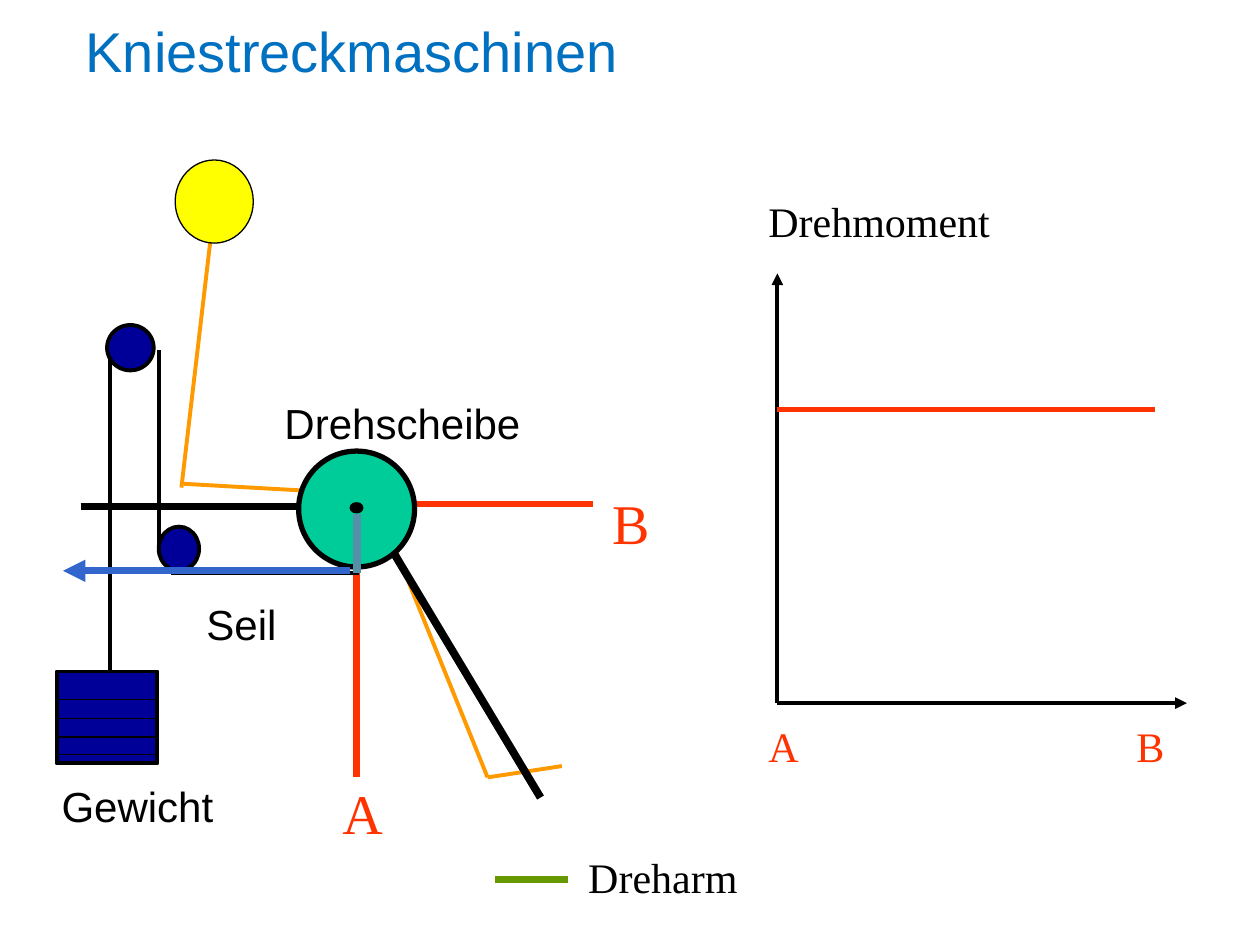
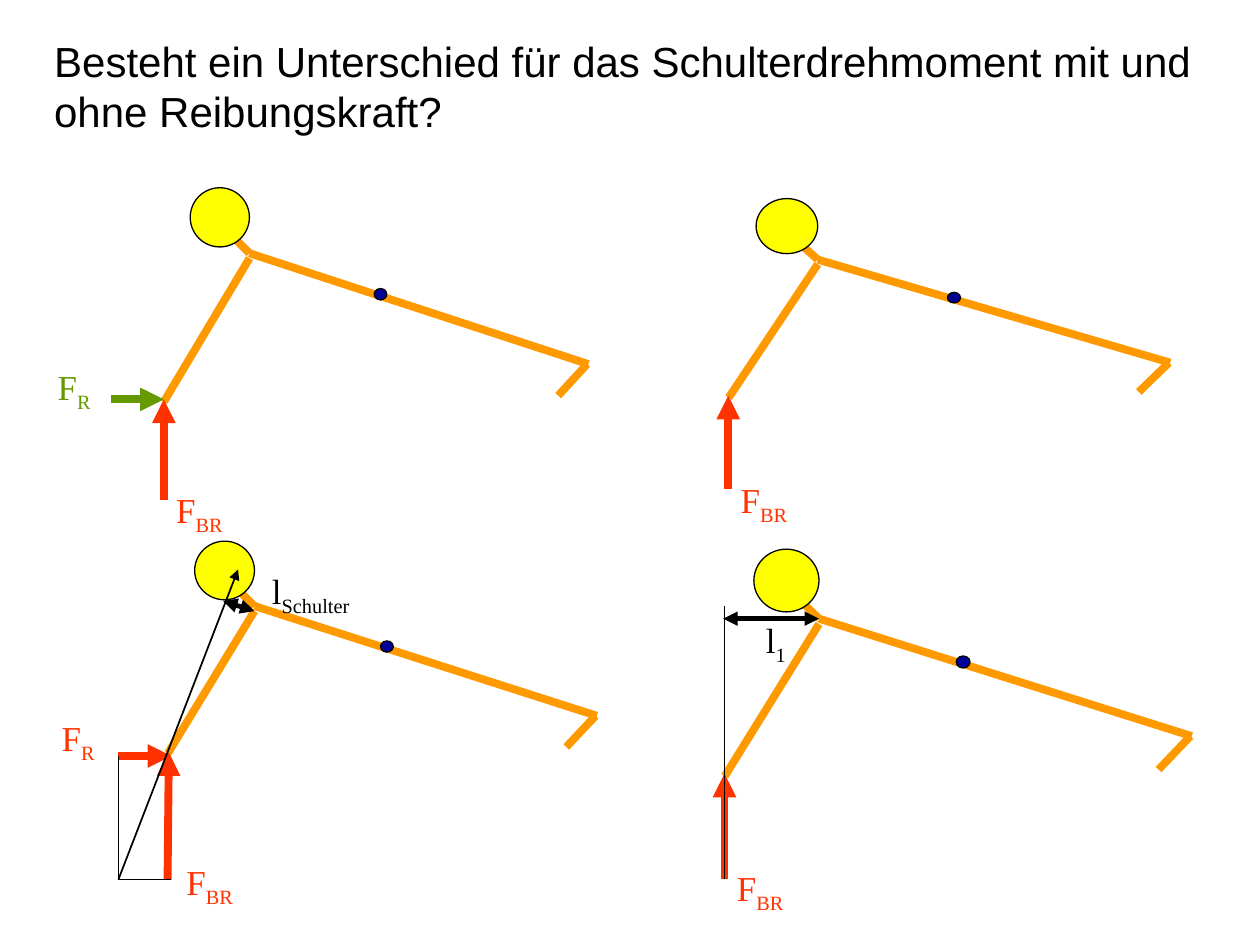
from dataclasses import dataclass

from lxml import etree
from pptx import Presentation
from pptx import util as u
from pptx.dml import color
from pptx.enum import shapes, text
from pptx.oxml import ns


@dataclass(frozen=True)
class Theme:
    black: str = "000000"
    red: str = "FF3300"
    green: str = "669900"
    orange: str = "FF9900"
    yellow: str = "FFFF00"
    navy: str = "000099"
    teal: str = "00CC99"
    lever: str = "5490A8"
    rope: str = "3366CC"
    heading: str = "0070C0"
    sans: str = "Arial"
    serif: str = "Times New Roman"
    large: int = 32
    medium: int = 24
    small: int = 20
    hairline: float = 0.75
    thin: float = 2.25
    dimension: float = 2.75
    accent: float = 3
    axis: float = 3.69
    thick: float = 4.5


THEME = Theme()


def rgb(value):
    return color.RGBColor.from_string(value)


def write_text(frame, content, subscript="", size=THEME.medium, font=THEME.serif,
               fill=THEME.black, wrap=True, spacing=None):
    frame.word_wrap = wrap
    frame.auto_size = text.MSO_AUTO_SIZE.NONE
    frame.vertical_anchor = text.MSO_ANCHOR.TOP
    paragraph = frame.paragraphs[0]
    paragraph.alignment = text.PP_ALIGN.LEFT
    paragraph.line_spacing = spacing
    for part in filter(None, (content, subscript)):
        run = paragraph.add_run()
        run.text = part
        run.font.size = u.Pt(size)
        run.font.name = font
        run.font.color.rgb = rgb(fill)
    if subscript:
        run._r.get_or_add_rPr().set("baseline", "-25000")


class Drawing:
    def __init__(self, presentation, theme):
        self.presentation = presentation
        self.theme = theme
        self.slide = None

    def start_slide(self, title, left, top, width, height, **text_format):
        layout = self.presentation.slide_layouts.get_by_name("Title Only")
        self.slide = self.presentation.slides.add_slide(layout)
        shape = self.slide.shapes.title
        shape.left, shape.top = u.Inches(left), u.Inches(top)
        shape.width, shape.height = u.Inches(width), u.Inches(height)
        write_text(shape.text_frame, title, font=self.theme.sans, **text_format)

    def label(self, content, left, top, width, height=0.5, **text_format):
        shape = self.slide.shapes.add_textbox(*map(u.Inches, (left, top, width, height)))
        write_text(shape.text_frame, content, **text_format)

    def line(self, start, end, stroke=THEME.black, weight=THEME.thin, head=False, tail=False):
        connector = self.slide.shapes.add_connector(
            shapes.MSO_CONNECTOR.STRAIGHT, *map(u.Inches, (*start, *end)))
        connector.line.color.rgb = rgb(stroke)
        connector.line.width = u.Pt(weight)
        properties = connector.element.spPr
        outline = properties.find(ns.qn("a:ln"))
        for tag, wanted in (("a:headEnd", head), ("a:tailEnd", tail)):
            if wanted:
                etree.SubElement(outline, ns.qn(tag), type="triangle")
        etree.SubElement(properties, ns.qn("a:effectLst"))

    def shape(self, left, top, width, height, fill, weight=THEME.hairline,
              kind=shapes.MSO_SHAPE.OVAL):
        shape = self.slide.shapes.add_shape(kind, *map(u.Inches, (left, top, width, height)))
        shape.shadow.inherit = False
        shape.fill.solid()
        shape.fill.fore_color.rgb = rgb(fill)
        shape.line.color.rgb = rgb(self.theme.black)
        shape.line.width = u.Pt(weight)

    def athlete(self, shoulder, scale):
        theme = self.theme

        def place(x, y):
            return shoulder[0] + x * scale[0], shoulder[1] + y * scale[1]

        def resize(width, height):
            return width * scale[0], height * scale[1]

        body = [((0, 0), (2.69, 0.88)), ((0, 0.04), (-0.68, 1.18)),
                ((-0.1, -0.1), (0, 0)), ((2.68, 0.88), (2.45, 1.13))]
        for start, end in body:
            self.line(place(*start), place(*end), theme.orange, theme.thick)
        self.shape(*place(-0.47, -0.52), *resize(0.47, 0.47), theme.yellow)
        self.shape(*place(0.99, 0.28), *resize(0.1, 0.09), theme.navy)

    def force(self, start, end, stroke):
        self.line(start, end, stroke, self.theme.thick, tail=True)

    def symbol(self, content, subscript, left, top, width, fill=THEME.black):
        self.label(content, left, top, width, 0.44, subscript=subscript,
                   size=self.theme.small, fill=fill)


def draw_torque_diagram(drawing):
    theme = drawing.theme
    origin = (6.17, 5.58)
    for end in ((6.17, 2.17), (9.42, 5.58)):
        drawing.line(origin, end, tail=True)
    drawing.label("Drehmoment", 6, 1.5, 1.96, wrap=False)
    drawing.label("A", 6, 5.67, 0.44, fill=theme.red, wrap=False)
    drawing.label("B", 8.92, 5.67, 0.42, fill=theme.red, wrap=False)
    drawing.line((6.17, 3.25), (9.17, 3.25), theme.red, theme.accent)
    drawing.line((3.93, 6.98), (4.51, 6.98), theme.green, theme.thick)
    drawing.label("Dreharm", 4.57, 6.71, 1.39, wrap=False)


def draw_machine(drawing):
    theme = drawing.theme
    limbs = [((1.67, 1.91), (1.44, 3.87)), ((2.88, 3.92), (1.46, 3.84)),
             ((2.96, 3.92), (3.87, 6.17)), ((4.46, 6.08), (3.87, 6.17))]
    for start, end in limbs:
        drawing.line(start, end, theme.orange)
    for start, end in (((2.83, 4), (2.83, 6.17)), ((4.71, 4), (2.87, 4))):
        drawing.line(start, end, theme.red, theme.axis)
    for name, left, top in (("A", 2.62, 6.13), ("B", 4.76, 3.83)):
        drawing.label(name, left, top, 0.5, 0.64, size=theme.large, fill=theme.red, wrap=False)
    for start, end in (((0.64, 4.02), (2.9, 4.02)), ((2.97, 4.13), (4.29, 6.33))):
        drawing.line(start, end, weight=theme.thick)
    drawing.line((2.85, 4.55), (1.36, 4.55))
    drawing.shape(1.26, 4.18, 0.32, 0.35, theme.navy, theme.thin)
    drawing.line((1.26, 4.37), (1.26, 2.78))
    drawing.shape(0.85, 2.58, 0.37, 0.36, theme.navy, theme.thin)
    drawing.line((0.87, 2.83), (0.87, 5.33))
    drawing.shape(0.45, 5.33, 0.8, 0.73, theme.navy, theme.thin, shapes.MSO_SHAPE.RECTANGLE)
    drawing.shape(2.37, 3.58, 0.92, 0.92, theme.teal, theme.accent)
    drawing.shape(1.39, 1.27, 0.62, 0.66, theme.yellow)
    drawing.shape(2.78, 3.99, 0.1, 0.08, theme.black)
    for plate in (5.55, 5.7, 5.85, 5.99):
        drawing.line((0.46, plate), (1.24, plate), weight=theme.hairline)
    for name, left, top in (("Gewicht", 0.39, 6.18), ("Seil", 1.54, 4.74),
                            ("Drehscheibe", 2.16, 3.14)):
        drawing.label(name, left, top, 2.5, 0.6, font=theme.sans, spacing=0.93)
    drawing.line((2.83, 4.55), (2.83, 4.08), theme.lever, theme.thick)
    drawing.line((2.78, 4.53), (0.5, 4.53), theme.rope, 4.25, tail=True)


def draw_shoulder_comparison(drawing):
    theme = drawing.theme

    drawing.athlete((1.98, 2.01), (1, 1))
    drawing.force((1.3, 3.97), (1.3, 3.17), theme.red)
    drawing.force((0.88, 3.17), (1.3, 3.17), theme.green)
    drawing.symbol("F", "BR", 1.3, 3.83, 1.04, theme.red)
    drawing.symbol("F", "R", 0.36, 2.85, 0.73, theme.green)

    drawing.athlete((6.49, 2.06), (1.04, 0.93))
    drawing.force((5.78, 3.88), (5.78, 3.14), theme.red)
    drawing.symbol("F", "BR", 5.78, 3.75, 1.09, theme.red)

    drawing.athlete((2.02, 4.81), (1.01, 0.99))
    drawing.force((1.33, 6.98), (1.34, 5.97), theme.red)
    drawing.force((0.94, 6), (1.36, 6), theme.red)
    drawing.symbol("F", "BR", 1.38, 6.78, 1.05, theme.red)
    drawing.symbol("F", "R", 0.39, 5.64, 0.74, theme.red)
    corner = (0.94, 6.98)
    for end in ((0.94, 6), (1.36, 6.98)):
        drawing.line(corner, end, weight=theme.hairline)
    drawing.line(corner, (1.89, 4.52), weight=1, tail=True)
    drawing.line((1.77, 4.77), (2.02, 4.85), weight=theme.dimension, head=True, tail=True)
    drawing.symbol("l", "Schulter", 2.06, 4.47, 1.05)

    drawing.athlete((6.5, 4.91), (1.1, 1.06))
    drawing.force((5.75, 6.98), (5.75, 6.14), theme.red)
    drawing.symbol("F", "BR", 5.75, 6.83, 1.15, theme.red)
    drawing.line((5.74, 4.91), (6.5, 4.91), weight=theme.dimension, head=True, tail=True)
    drawing.line((5.75, 6.98), (5.75, 4.81), weight=theme.hairline)
    drawing.symbol("l", "1", 5.98, 4.86, 0.4)


def main():
    presentation = Presentation()
    presentation.slide_width = u.Inches(10)
    presentation.slide_height = u.Inches(7.5)
    drawing = Drawing(presentation, THEME)

    drawing.start_slide("Kniestreckmaschinen", 0.58, 0.08, 8.67, 1.13,
                        size=THEME.large, fill=THEME.heading)
    draw_torque_diagram(drawing)
    draw_machine(drawing)

    drawing.start_slide(
        "Besteht ein Unterschied für das Schulterdrehmoment mit und ohne Reibungskraft?",
        0.33, 0.23, 9.23, 0.91)
    draw_shoulder_comparison(drawing)

    presentation.save("out.pptx")


if __name__ == "__main__":
    main()
